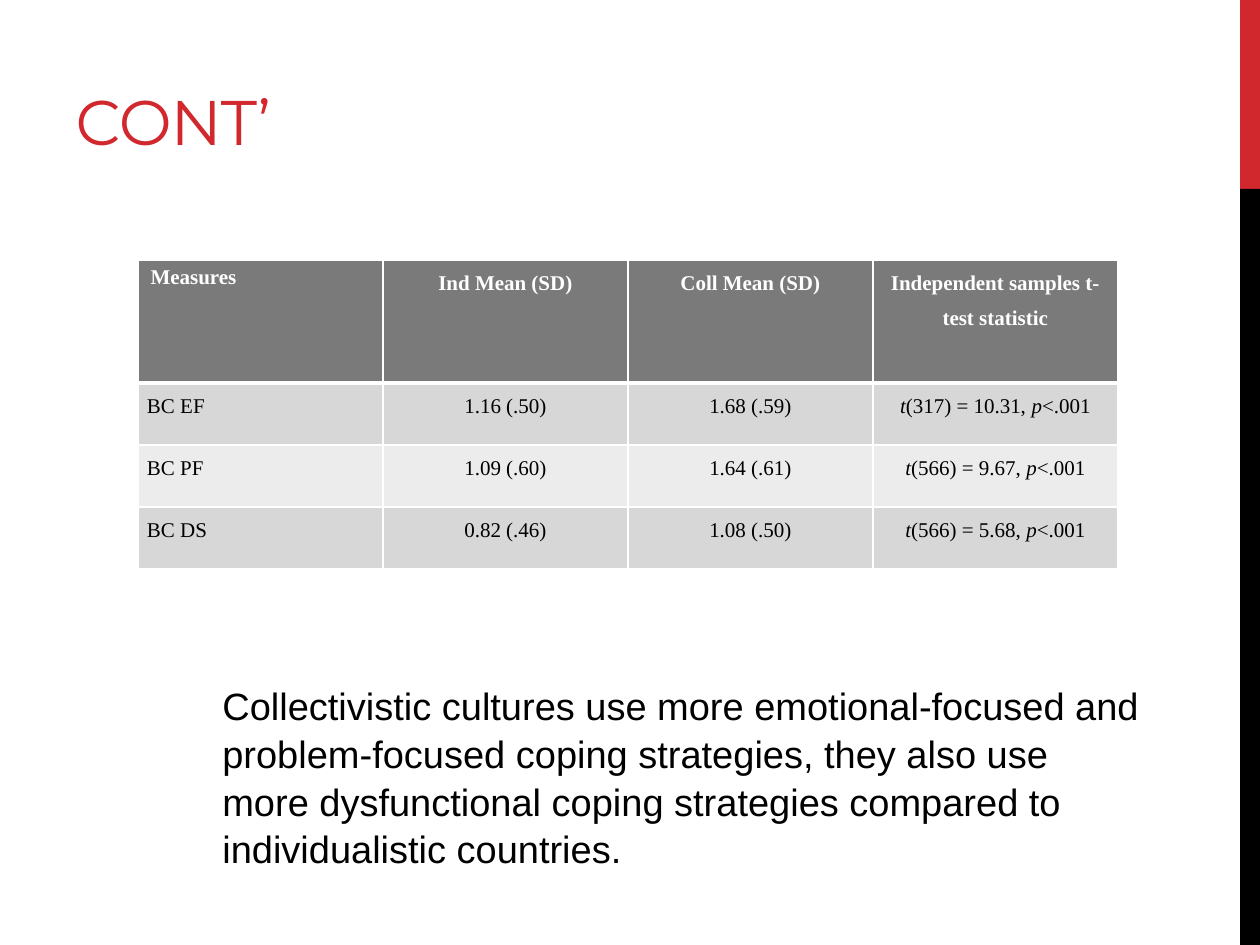
from lxml import etree
from pptx import Presentation
from pptx import util as u
from pptx.dml.color import RGBColor
from pptx.enum import shapes, text
from pptx.oxml.ns import qn

C = {"red": "D1282E", "black": "000000", "white": "FFFFFF",
     "header": "7A7A7A", "odd": "D7D7D7", "even": "ECECEC"}
TITLE = "CONT’"
HEADERS = ["Measures", "Ind Mean (SD)", "Coll Mean (SD)",
           "Independent samples t-test statistic"]
ROWS = [("BC EF", "1.16 (.50)", "1.68 (.59)", "(317) = 10.31, "),
        ("BC PF", "1.09 (.60)", "1.64 (.61)", "(566) = 9.67, "),
        ("BC DS", "0.82 (.46)", "1.08 (.50)", "(566) = 5.68, ")]
FINDING = ("Collectivistic cultures use more emotional-focused and "
           "problem-focused coping strategies, they also use more "
           "dysfunctional coping strategies compared to individualistic countries.")
BARS = [(0, 189, "red"), (189, 756, "black")]
COL_W, HEAD_H, ROW_H = 245, 123, 62


def px(n):
    return u.Emu(round(n * 914400 / 126))


def rgb(name):
    return RGBColor.from_string(C[name])


def box(*at):
    return [px(n) for n in at]


def add_run(p, words, size, font, color, bold=False, italic=False):
    r = p.add_run()
    r.text = words
    f = r.font
    f.size, f.name, f.bold, f.italic = u.Pt(size), font, bold, italic
    f.color.rgb = rgb(color)
    return r


def set_borders(cell, bottom):
    tcPr = cell._tc.get_or_add_tcPr()
    sides = [("lnL", 1), ("lnR", 1), ("lnT", 1), ("lnB", bottom)]
    for i, (tag, width) in enumerate(sides):
        ln = etree.Element(qn("a:" + tag), w=str(u.Pt(width)))
        fill = etree.SubElement(ln, qn("a:solidFill"))
        etree.SubElement(fill, qn("a:srgbClr"), val=C["white"])
        tcPr.insert(i, ln)


def fill_cell(cell, runs, row, col):
    header = row == 0
    cell.fill.solid()
    cell.fill.fore_color.rgb = rgb("header" if header else "odd" if row % 2 else "even")
    p = cell.text_frame.paragraphs[0]
    if row or col:
        cell.margin_left = cell.margin_right = px(9)
        cell.margin_top = cell.margin_bottom = 0
        p.line_spacing = 1.5
    p.alignment = text.PP_ALIGN.CENTER if col else text.PP_ALIGN.LEFT
    for words, italic in runs:
        add_run(p, words, 12, "Times New Roman",
                "white" if header else "black", header, italic)
    set_borders(cell, 3 if row in (0,) else 1)


prs = Presentation()
prs.slide_width, prs.slide_height = u.Inches(10), u.Inches(7.5)
s = prs.slides.add_slide(prs.slide_layouts[5])

for top, height, color in BARS:
    sp = s.shapes.add_shape(shapes.MSO_SHAPE.RECTANGLE, *box(1240, top, 20, height))
    sp.shadow.inherit = False
    sp.fill.solid()
    sp.fill.fore_color.rgb = rgb(color)
    sp.line.fill.background()

title = s.shapes.title
title.left, title.top, title.width, title.height = box(63, 21, 798, 143)
tf = title.text_frame
tf.vertical_anchor = text.MSO_ANCHOR.BOTTOM
p = tf.paragraphs[0]
p.alignment = text.PP_ALIGN.LEFT
r = add_run(p, TITLE, 36, "Montserrat", "red")
r.font._element.set("spc", "-60")

grid = [[[(h, False)] for h in HEADERS]]
for *plain, stat in ROWS:
    grid.append([[(v, False)] for v in plain]
                + [[("t", True), (stat, False), ("p", True), ("<.001", False)]])
table = s.shapes.add_table(len(grid), len(HEADERS), *box(
    138, 260, COL_W * len(HEADERS), HEAD_H + ROW_H * len(ROWS))).table
for column in table.columns:
    column.width = px(COL_W)
for i, row in enumerate(grid):
    table.rows[i].height = px(ROW_H if i else HEAD_H)
    for j, runs in enumerate(row):
        fill_cell(table.cell(i, j), runs, i, j)
for j in range(len(HEADERS)):
    table.cell(1, j)._tc.tcPr.find(qn("a:lnT")).set("w", str(u.Pt(3)))

tf = s.shapes.add_textbox(*box(210, 674, 944, 166)).text_frame
tf.word_wrap = True
p = tf.paragraphs[0]
p.line_spacing = 1.05
p.space_after = u.Pt(6)
add_run(p, FINDING, 21.7, "Arial", "black")

prs.save("out.pptx")
